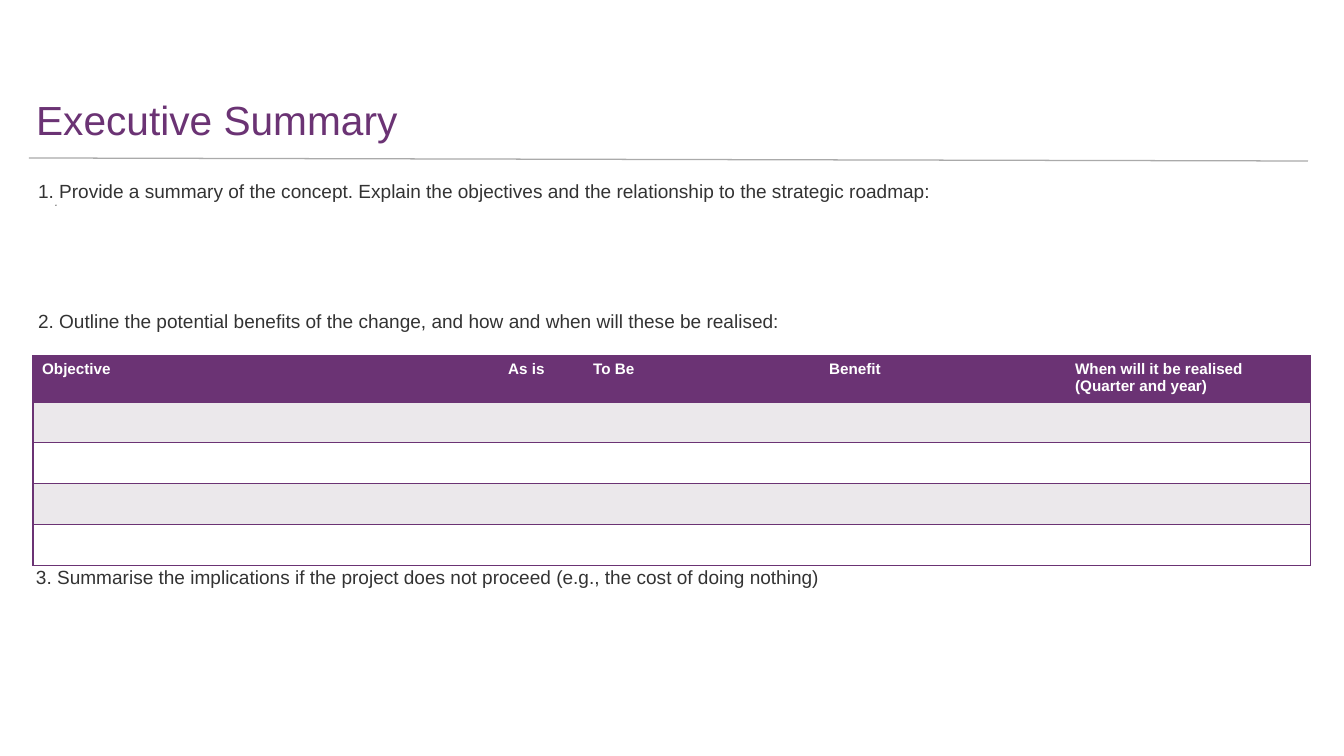
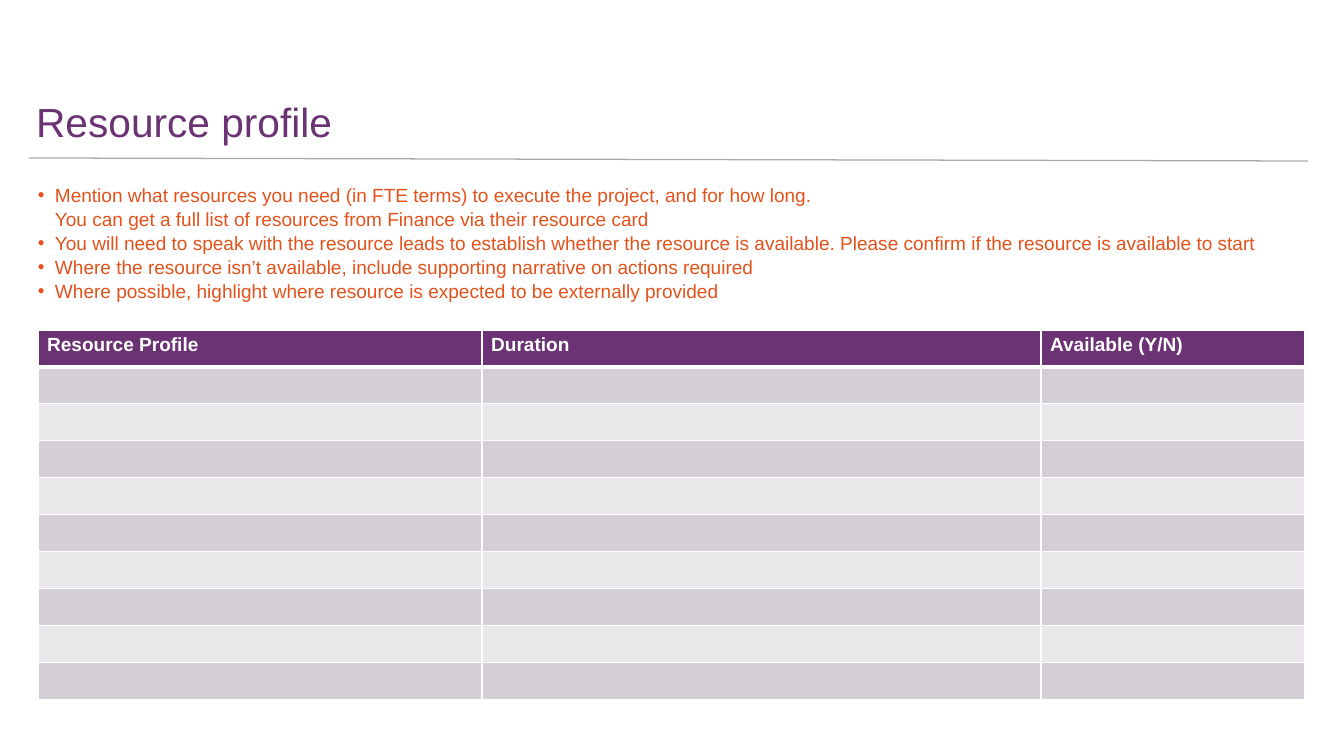
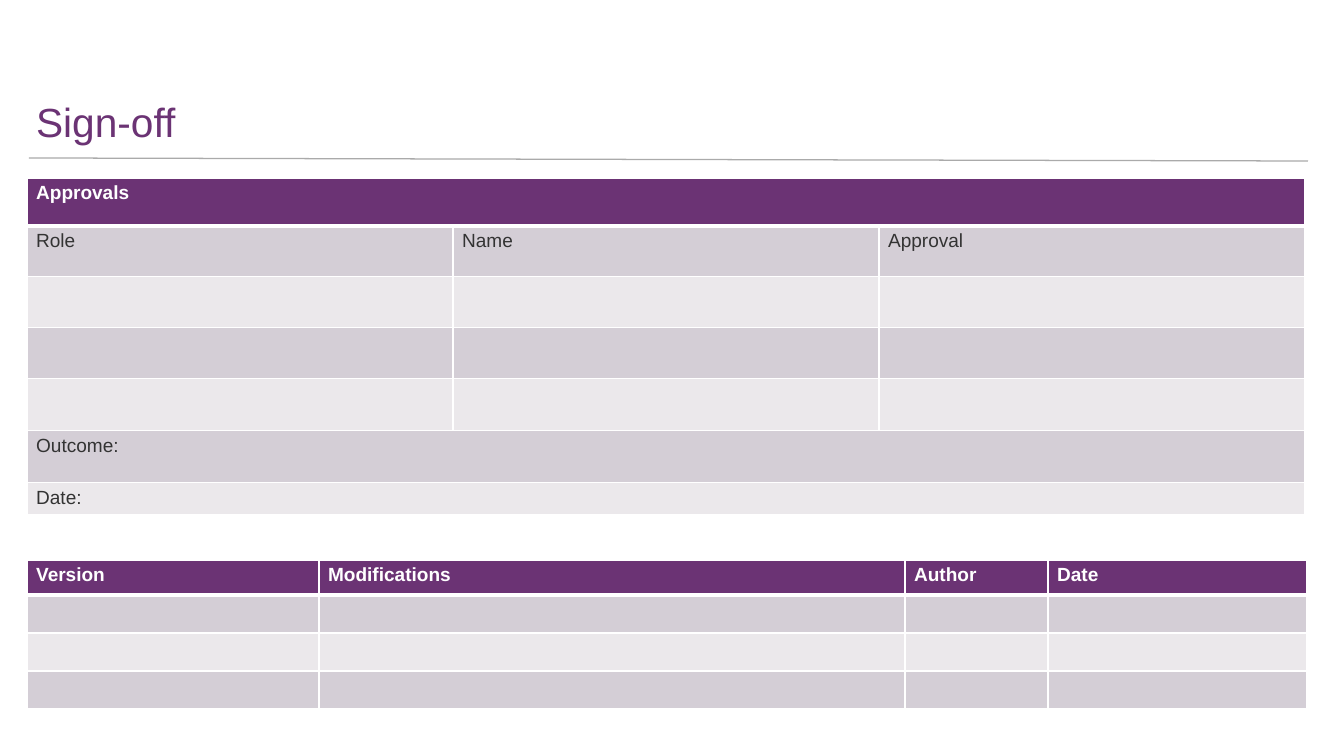
"""Build three project-proposal slides: summary, resources and sign-off."""
from lxml.etree import SubElement
from pptx import Presentation
from pptx.dml.color import RGBColor
from pptx.enum.shapes import MSO_CONNECTOR
from pptx.enum.text import MSO_ANCHOR, MSO_AUTO_SIZE, PP_ALIGN
from pptx.oxml.ns import qn
from pptx.util import Emu, Pt

LINE = MSO_CONNECTOR.STRAIGHT
TOP = MSO_ANCHOR.TOP
FIXED = MSO_AUTO_SIZE.NONE
LEFT = PP_ALIGN.LEFT

SCALE = 10000
SIZE = (1344, 756)
RULE = (29, 158, 1308, 161)
FONT = "Arial"
COLORS = {
    "plum": "6B3374", "band": "D4CED6", "pale": "EBE8EB", "white": "FFFFFF",
    "ink": "333333", "gray": "808080", "rule": "AAAAAA", "orange": "E4521B",
}

SLIDES = [
    {
        "title": "Executive Summary",
        "top": 87,
        "texts": [
            {"box": (27, 561, 1226, 32), "lines": [
                "3. Summarise the implications if the project does not proceed "
                "(e.g., the cost of doing nothing)"]},
            {"box": (46, 178, 1210, 34), "lines": ["."], "size": 12, "font": "Cabin",
             "color": "gray", "italic": True, "space": 1.5},
            {"box": (29, 175, 1254, 124), "lines": [
                "1. Provide a summary of the concept. Explain the objectives "
                "and the relationship to the strategic roadmap:"]},
            {"box": (29, 305, 931, 32), "lines": [
                "2. Outline the potential benefits of the change, "
                "and how and when will these be realised:"]},
        ],
        "tables": [
            {"at": (33, 356), "cols": [466, 85, 236, 246, 245], "rows": [46] + [41] * 4,
             "cells": {0: ["Objective", "As is", "To Be", "Benefit",
                           "When will it be realised (Quarter and year)"]},
             "size": 12, "bands": ("pale", "white"), "edge": "plum", "grid": False},
        ],
    },
    {
        "title": "Resource profile",
        "top": 89,
        "texts": [
            {"box": (29, 178, 1278, 124), "color": "orange", "bullet": True,
             "space": 1.05, "lines": [
                 "Mention what resources you need (in FTE terms) to execute the project, "
                 "and for how long.\n"
                 "You can get a full list of resources from Finance via their resource card",
                 "You will need to speak with the resource leads to establish whether the "
                 "resource is available. Please confirm if the resource is available to start",
                 "Where the resource isn’t available, include supporting narrative "
                 "on actions required",
                 "Where possible, highlight where resource is expected to be "
                 "externally provided"]},
        ],
        "tables": [
            {"at": (38, 330), "cols": [444, 559, 264], "rows": [37] * 10,
             "cells": {0: ["Resource Profile", "Duration", "Available (Y/N)"]}},
        ],
    },
    {
        "title": "Sign-off",
        "top": 89,
        "texts": [],
        "tables": [
            {"at": (27, 178), "cols": [426] * 3, "rows": [48] + [51] * 3 + [52] * 2 + [32],
             "cells": {0: ["Approvals"], 1: ["Role", "Name", "Approval"],
                       5: ["Outcome:"], 6: ["Date:"]},
             "spans": (0, 5, 6)},
            {"at": (27, 560), "cols": [292, 586, 143, 259], "rows": [35] + [38] * 3,
             "cells": {0: ["Version", "Modifications", "Author", "Date"]}},
        ],
    },
]


def px(num):
    return Emu(num * SCALE)


def rgb(name):
    return RGBColor.from_string(COLORS[name])


def add_run(par, text, size, color, font=FONT, bold=False, italic=False):
    run = par.add_run()
    run.text = text
    face = run.font
    face.name, face.size = font, Pt(size)
    face.bold, face.italic = bold, italic
    face.color.rgb = rgb(color)


def add_title(slide, text, top):
    title = slide.shapes.title
    title.left, title.top, title.width, title.height = map(px, (27, top, 1227, 74))
    frame = title.text_frame
    frame.auto_size, frame.vertical_anchor = FIXED, TOP
    frame.margin_top = px(8)
    par = frame.paragraphs[0]
    par.alignment = LEFT
    add_run(par, text, 32, "plum")


def add_rule(slide):
    rule = slide.shapes.add_connector(LINE, *map(px, RULE))
    rule.line.color.rgb = rgb("rule")
    rule.line.width = Pt(1)
    SubElement(rule.element.spPr, qn("a:effectLst"))


def add_text(slide, box, lines, size=15, color="ink", font=FONT,
             italic=False, space=None, bullet=False):
    frame = slide.shapes.add_textbox(*map(px, box)).text_frame
    frame.word_wrap = True
    for num, line in enumerate(lines):
        par = frame.add_paragraph() if num else frame.paragraphs[0]
        if space:
            par.line_spacing = space
        if bullet:
            props = par._p.get_or_add_pPr()
            props.set("marL", str(px(17)))
            props.set("indent", str(px(-17)))
            SubElement(props, qn("a:buFont"), typeface=FONT)
            SubElement(props, qn("a:buChar"), char="•")
        for part, text in enumerate(line.split("\n")):
            if part:
                par.add_line_break()
            add_run(par, text, size, color, font, italic=italic)


def set_edges(cell, color, widths):
    props = cell._tc.get_or_add_tcPr()
    for side, width in zip("LRTB", widths):
        edge = SubElement(props, qn("a:ln" + side), w=str(Pt(width)))
        if width:
            fill = SubElement(edge, qn("a:solidFill"))
            SubElement(fill, qn("a:srgbClr"), val=COLORS[color])
        else:
            SubElement(edge, qn("a:noFill"))


def add_table(slide, at, cols, rows, cells, size=15, bands=("band", "pale"),
              edge="white", grid=True, spans=()):
    area = (*at, sum(cols), sum(rows))
    table = slide.shapes.add_table(len(rows), len(cols), *map(px, area)).table
    table.first_row = table.horz_banding = False
    for col, width in zip(table.columns, cols):
        col.width = px(width)
    last = len(cols) - 1
    for r, height in enumerate(rows):
        table.rows[r].height = px(height)
        texts = cells.get(r, [])
        for c in range(len(cols)):
            cell = table.cell(r, c)
            par = cell.text_frame.paragraphs[0]
            if c < len(texts):
                add_run(par, texts[c], size, "ink" if r else "white", bold=r == 0)
            else:
                SubElement(par._p, qn("a:endParaRPr"), sz=str(size * 100))
            set_edges(cell, edge, (
                int(grid or c == 0), int(grid or c == last),
                3 if grid and r == 1 else 1, 3 if grid and r == 0 else 1))
            cell.fill.solid()
            cell.fill.fore_color.rgb = rgb(bands[(r - 1) % 2] if r else "plum")
    for r in spans:
        table.cell(r, 0).merge(table.cell(r, last))


def main():
    deck = Presentation()
    deck.slide_width, deck.slide_height = map(px, SIZE)
    for page in SLIDES:
        slide = deck.slides.add_slide(deck.slide_layouts[5])
        add_rule(slide)
        add_title(slide, page["title"], page["top"])
        for text in page["texts"]:
            add_text(slide, **text)
        for table in page["tables"]:
            add_table(slide, **table)
    deck.save("out.pptx")


if __name__ == "__main__":
    main()
